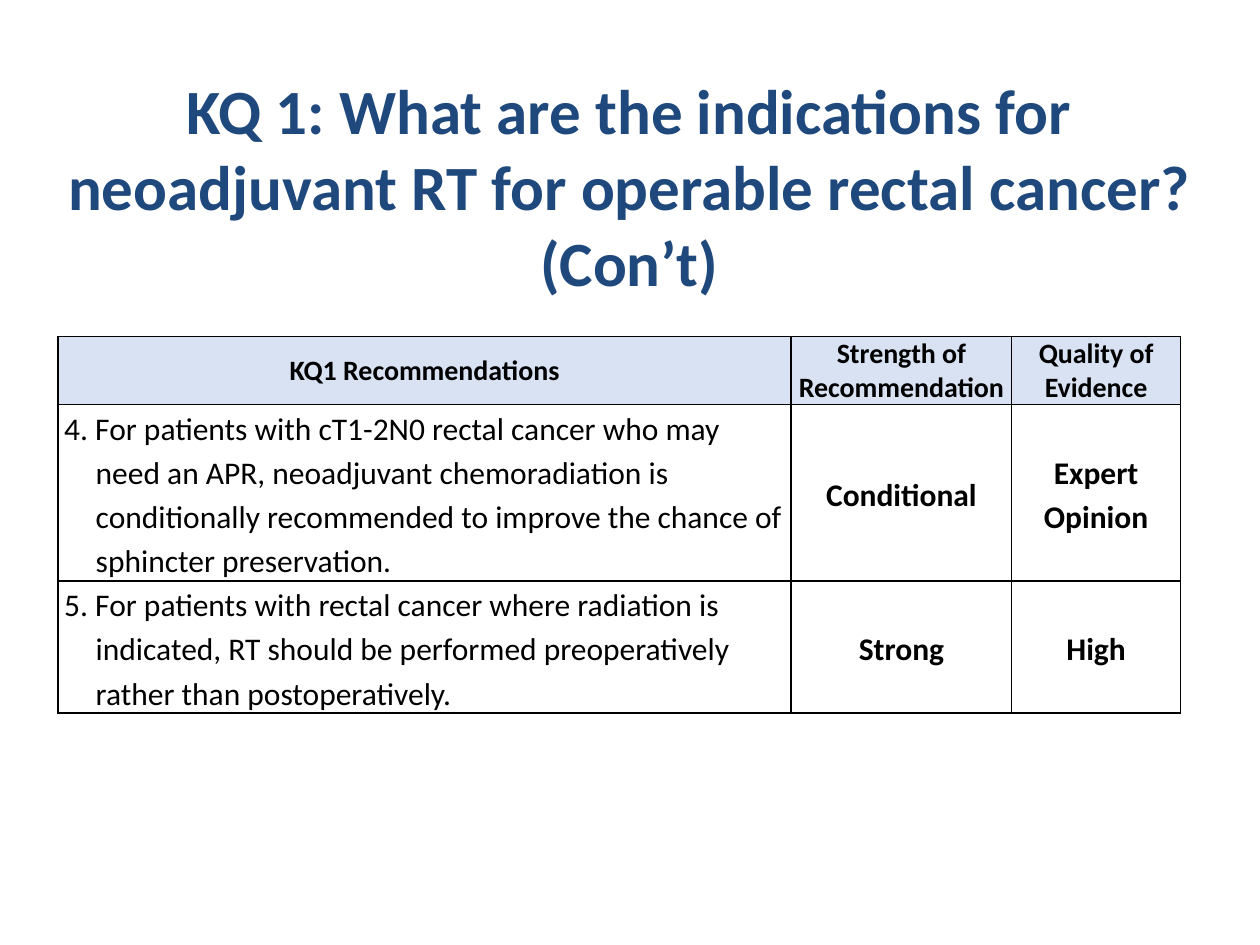
from dataclasses import dataclass
from typing import Optional

from lxml import etree
from pptx import Presentation
from pptx.dml.color import RGBColor
from pptx.enum.text import MSO_ANCHOR, PP_ALIGN
from pptx.oxml.ns import qn
from pptx.util import Inches, Pt

NAVY = RGBColor(0x1F, 0x49, 0x7D)
BLACK = RGBColor(0, 0, 0)
PALE_BLUE = RGBColor(0xD9, 0xE2, 0xF3)
LEFT, CENTER = PP_ALIGN.LEFT, PP_ALIGN.CENTER
TOP, MIDDLE = MSO_ANCHOR.TOP, MSO_ANCHOR.MIDDLE
FONT = "Calibri"

SLIDE_W, SLIDE_H = Inches(10), Inches(7.5)
COLUMNS = [5.82, 1.75, 1.34]
ROWS = [0.54, 1.4, 1.05]
HANGING = 0.25


@dataclass(frozen=True)
class CellStyle:
    size: int
    bold: bool = True
    align: PP_ALIGN = CENTER
    anchor: MSO_ANCHOR = MIDDLE
    spacing: Optional[float] = 1.15
    indent: float = 0
    fill: Optional[RGBColor] = None


HEADER = CellStyle(16, spacing=None, fill=PALE_BLUE)
STATEMENT = CellStyle(18, bold=False, align=LEFT, anchor=TOP, indent=HANGING)
RATING = CellStyle(18)

CONTENT = [
    ("KQ1 Recommendations", "Strength of Recommendation", "Quality of Evidence"),
    ("4. For patients with cT1-2N0 rectal cancer who may need an APR, "
     "neoadjuvant chemoradiation is conditionally recommended to improve "
     "the chance of sphincter preservation.", "Conditional", "Expert Opinion"),
    ("5. For patients with rectal cancer where radiation is indicated, RT should "
     "be performed preoperatively rather than postoperatively.", "Strong", "High"),
]


def write(tf, text: str, *, size: int, color: RGBColor = BLACK, bold: bool = True,
          align: PP_ALIGN = CENTER, spacing: Optional[float] = None,
          indent: float = 0) -> None:
    tf.word_wrap = True
    p = tf.paragraphs[0]
    p.alignment = align
    if spacing:
        p.line_spacing = spacing
    if indent:
        pPr = p._p.get_or_add_pPr()
        pPr.set("marL", str(Inches(indent)))
        pPr.set("indent", str(-Inches(indent)))
    r = p.add_run()
    r.text = text
    r.font.name, r.font.size, r.font.bold = FONT, Pt(size), bold
    r.font.color.rgb = color


def add_borders(cell, width: float = 1, color: RGBColor = BLACK) -> None:
    tcPr = cell._tc.get_or_add_tcPr()
    for i, side in enumerate(("lnL", "lnR", "lnT", "lnB")):
        ln = etree.Element(qn(f"a:{side}"), w=str(Pt(width)))
        fill = etree.SubElement(ln, qn("a:solidFill"))
        etree.SubElement(fill, qn("a:srgbClr"), val=str(color))
        tcPr.insert(i, ln)


def fill_cell(cell, text: str, style: CellStyle) -> None:
    cell.margin_left = cell.margin_right = Inches(0.05)
    cell.margin_top = cell.margin_bottom = 0
    cell.vertical_anchor = style.anchor
    if style.fill is None:
        cell.fill.background()
    else:
        cell.fill.solid()
        cell.fill.fore_color.rgb = style.fill
    add_borders(cell)
    write(cell.text_frame, text, size=style.size, bold=style.bold,
          align=style.align, spacing=style.spacing, indent=style.indent)


def add_title(s, text: str) -> None:
    sp = s.shapes.add_textbox(Inches(0.08), Inches(0.5), Inches(9.83), Inches(1.82))
    tf = sp.text_frame
    tf.margin_top = Inches(0.07)
    tf.vertical_anchor = TOP
    write(tf, text, size=36, color=NAVY)


def add_recommendations(s) -> None:
    table = s.shapes.add_table(
        len(ROWS), len(COLUMNS), Inches(0.46), Inches(2.67),
        Inches(sum(COLUMNS)), Inches(sum(ROWS))).table
    table.first_row = table.horz_banding = False
    for column, width in zip(table.columns, COLUMNS):
        column.width = Inches(width)
    for i, (row, height) in enumerate(zip(table.rows, ROWS)):
        row.height = Inches(height)
        for j, text in enumerate(CONTENT[i]):
            style = HEADER if i == 0 else STATEMENT if j == 0 else RATING
            fill_cell(table.cell(i, j), text, style)


def main() -> None:
    prs = Presentation()
    prs.slide_width, prs.slide_height = SLIDE_W, SLIDE_H
    s = prs.slides.add_slide(prs.slide_layouts[6])
    # Question heading
    add_title(s, "KQ 1: What are the indications for neoadjuvant RT "
                 "for operable rectal cancer? (Con’t)")
    # Recommendations with their ratings
    add_recommendations(s)
    prs.save("out.pptx")


if __name__ == "__main__":
    main()
